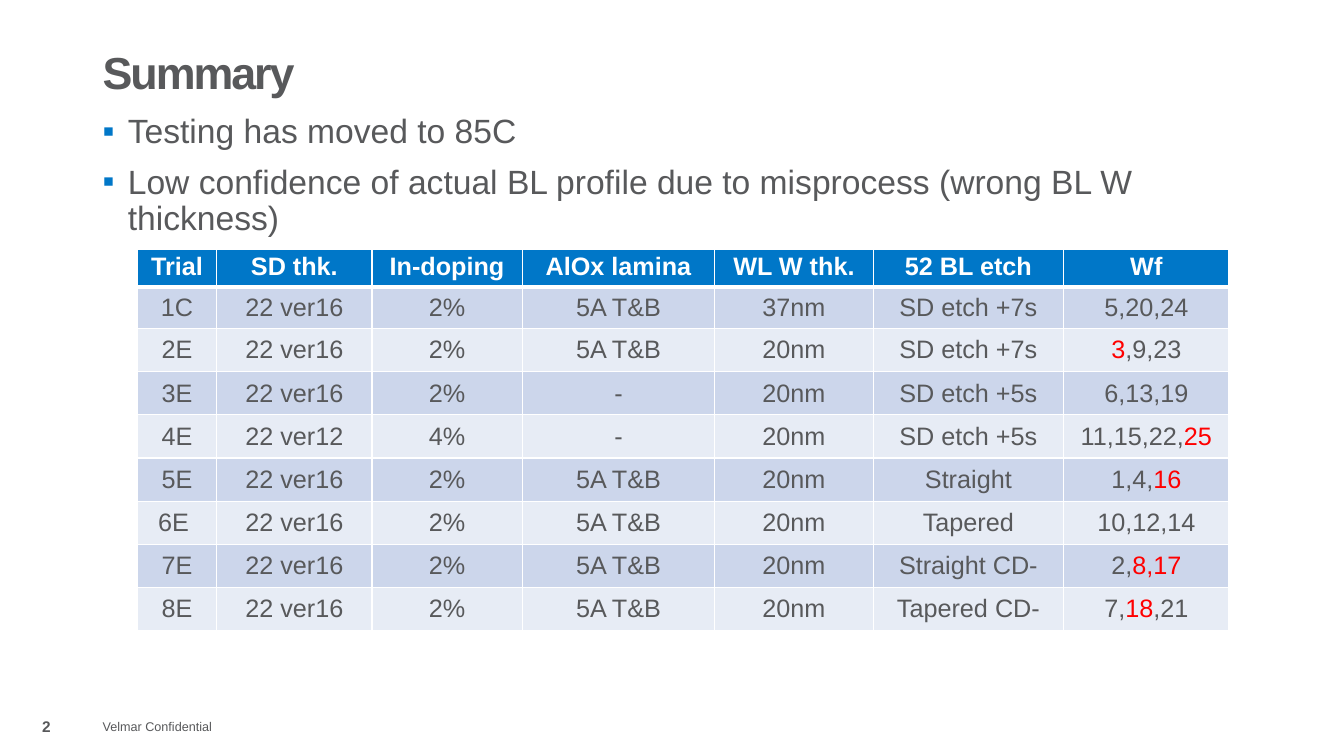
from lxml.etree import SubElement
from pptx import Presentation
from pptx.dml.color import RGBColor
from pptx.enum.text import MSO_ANCHOR, PP_ALIGN
from pptx.oxml.ns import qn
from pptx.util import Inches, Pt

COLORS = {
    "text": "58595B",
    "accent": "0077C8",
    "white": "FFFFFF",
    "alert": "FF0000",
    "band_dark": "CCD6EB",
    "band_light": "E7ECF5",
}
FONT = "Arial"
WIDTH, HEIGHT = Inches(13.33), Inches(7.5)
LEFT, CONTENT_WIDTH = 6.9, 86.27
FOOTER_TOP, FOOTER_HEIGHT = 93.47, 5.33

BULLETS = [
    "Testing has moved to 85C",
    "Low confidence of actual BL profile due to misprocess (wrong BL W thickness)",
]
COLUMN_SHARES = [5.93, 11.55, 11.18, 14.33, 11.78, 14.18, 12.3]
ROW_SHARES = [5.07, 5.47] + [5.71] * 7
TRIALS = [
    ["Trial", "SD thk.", "In-doping", "AlOx lamina", "WL W thk.", "52 BL etch", "Wf"],
    ["1C", "22 ver16", "2%", "5A T&B", "37nm", "SD etch +7s", "5,20,24"],
    ["2E", "22 ver16", "2%", "5A T&B", "20nm", "SD etch +7s", "*3*,9,23"],
    ["3E", "22 ver16", "2%", "-", "20nm", "SD etch +5s", "6,13,19"],
    ["4E", "22 ver12", "4%", "-", "20nm", "SD etch +5s", "11,15,22,*25*"],
    ["5E", "22 ver16", "2%", "5A T&B", "20nm", "Straight", "1,4,*16*"],
    ["6E ", "22 ver16", "2%", "5A T&B", "20nm", "Tapered", "10,12,14"],
    ["7E", "22 ver16", "2%", "5A T&B", "20nm", "Straight CD-", "2,*8,17*"],
    ["8E", "22 ver16", "2%", "5A T&B", "20nm", "Tapered CD-", "7,*18*,21"],
]


def across(percent):
    """Return a percentage of the slide width."""
    return round(WIDTH * percent / 100)


def down(percent):
    """Return a percentage of the slide height."""
    return round(HEIGHT * percent / 100)


def style(span, size, color="text", bold=False):
    """Set the font of one run."""
    span.font.name = FONT
    span.font.size = Pt(size)
    span.font.bold = bold
    span.font.color.rgb = RGBColor.from_string(COLORS[color])


def add_text(page, area, lines, size, bold=False, anchor=MSO_ANCHOR.MIDDLE):
    """Add a wrapping text box and return its paragraphs."""
    left, top, width, height = area
    box = page.shapes.add_textbox(across(left), down(top), across(width), down(height))
    frame = box.text_frame
    frame.text = "\n".join(lines)
    frame.word_wrap = True
    frame.vertical_anchor = anchor
    for para in frame.paragraphs:
        style(para.runs[0], size, bold=bold)
    return frame.paragraphs


def add_title(page, title):
    """Add the tightly spaced heading."""
    para = add_text(page, (LEFT, 5.33, CONTENT_WIDTH, 9.2), [title], 32, bold=True)[0]
    para.line_spacing = 0.9
    para.runs[0].font._element.set("spc", "-150")


def add_bullets(page, lines):
    """Add the list with square accent bullets."""
    area = (LEFT, 14.53, CONTENT_WIDTH, 68.93)
    for index, para in enumerate(add_text(page, area, lines, 24, anchor=MSO_ANCHOR.TOP)):
        para.line_spacing = 0.9
        para.space_before = Pt(10 if index else 0)
        properties = para._p.get_or_add_pPr()
        properties.set("marL", str(Inches(0.25)))
        properties.set("indent", str(-Inches(0.25)))
        color = SubElement(properties, qn("a:buClr"))
        SubElement(color, qn("a:srgbClr"), val=COLORS["accent"])
        SubElement(properties, qn("a:buFont"), typeface=FONT)
        SubElement(properties, qn("a:buChar"), char="▪")


def add_border(cell, side, points):
    """Draw one white edge of a cell."""
    line = SubElement(cell._tc.get_or_add_tcPr(), qn(f"a:{side}"), w=str(Pt(points)))
    fill = SubElement(line, qn("a:solidFill"))
    SubElement(fill, qn("a:srgbClr"), val=COLORS["white"])


def fill_cell(cell, text, row):
    """Write a cell, with the parts between asterisks in the alert colour."""
    header = row == 0
    cell.margin_top = cell.margin_bottom = Inches(0.04)
    cell.vertical_anchor = MSO_ANCHOR.TOP if header else MSO_ANCHOR.MIDDLE
    para = cell.text_frame.paragraphs[0]
    para.alignment = PP_ALIGN.CENTER
    base = "white" if header else "text"
    for index, part in enumerate(text.split("*")):
        if part:
            span = para.add_run()
            span.text = part
            style(span, 18, "alert" if index % 2 else base, header)
    edges = {"lnL": 1, "lnR": 1, "lnT": 3 if row == 1 else 1, "lnB": 3 if header else 1}
    for side, points in edges.items():
        add_border(cell, side, points)
    band = "band_dark" if row % 2 else "band_light"
    cell.fill.solid()
    cell.fill.fore_color.rgb = RGBColor.from_string(COLORS["accent" if header else band])


def add_trials(page):
    """Add the table of trials."""
    table = page.shapes.add_table(
        len(TRIALS), len(COLUMN_SHARES), across(10.2), down(32.93),
        across(sum(COLUMN_SHARES)), down(sum(ROW_SHARES)),
    ).table
    for column, share in zip(table.columns, COLUMN_SHARES):
        column.width = across(share)
    for row, (values, share) in enumerate(zip(TRIALS, ROW_SHARES)):
        table.rows[row].height = down(share)
        for column, value in enumerate(values):
            fill_cell(table.cell(row, column), value, row)


def add_footer(page):
    """Add the confidentiality note and the page number."""
    add_text(page, (LEFT, FOOTER_TOP, 11.4, FOOTER_HEIGHT), ["Velmar Confidential"], 9)
    number = add_text(page, (0, FOOTER_TOP, LEFT, FOOTER_HEIGHT), ["2"], 11, bold=True)
    number[0].alignment = PP_ALIGN.CENTER


def main():
    """Build the summary slide and save it."""
    deck = Presentation()
    deck.slide_width, deck.slide_height = WIDTH, HEIGHT
    page = deck.slides.add_slide(deck.slide_layouts[6])
    add_title(page, "Summary")
    add_bullets(page, BULLETS)
    add_footer(page)
    add_trials(page)
    deck.save("out.pptx")


if __name__ == "__main__":
    main()
